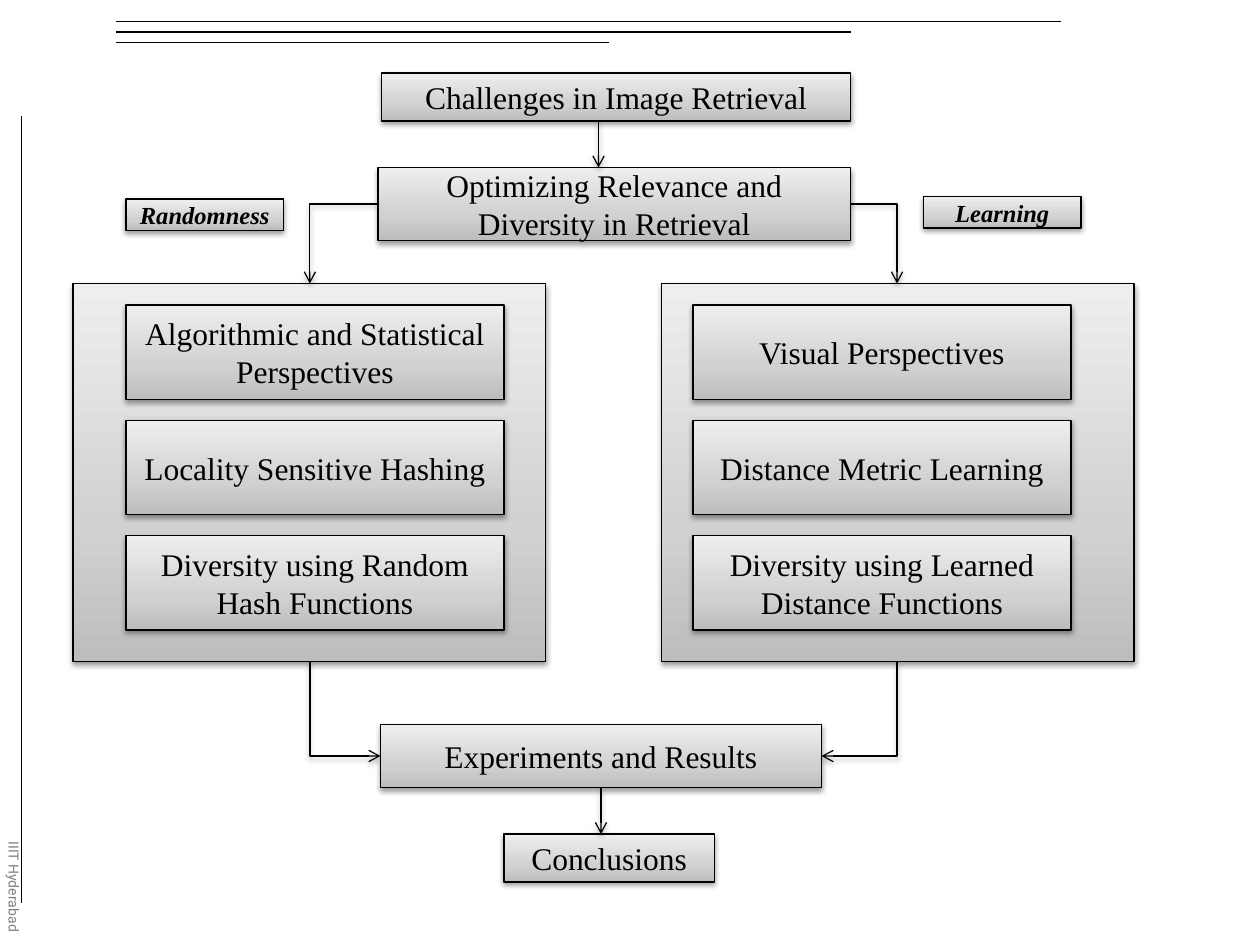
import copy

import lxml.etree
import pptx
import pptx.dml.color
import pptx.enum.shapes
import pptx.enum.text
import pptx.oxml
import pptx.oxml.ns
import pptx.util

Inches = pptx.util.Inches
Pt = pptx.util.Pt
qn = pptx.oxml.ns.qn
CONNECTOR = pptx.enum.shapes.MSO_CONNECTOR

COLORS = {"ink": "000000", "label": "808080", "dark": "BDBDBD", "middle": "D1D1D1", "light": "EEEEEE"}
GRADIENT = [(0, "dark"), (0.35, "middle"), (1, "light")]
SERIF = "Times New Roman"
BOTTOM = 2


def color(name):
    return pptx.dml.color.RGBColor.from_string(COLORS[name])


def add_shadow(effects):
    effects.append(pptx.oxml.parse_xml(
        '<a:outerShdw xmlns:a="http://schemas.openxmlformats.org/drawingml/2006/main" '
        'blurRad="40000" dist="20000" dir="5400000" rotWithShape="0">'
        f'<a:srgbClr val="{COLORS["ink"]}"><a:alpha val="38000"/></a:srgbClr></a:outerShdw>'))


def style_line(line):
    line.color.rgb = color("ink")
    line.width = Pt(0.75)


def fill_gradient(fill):
    fill.gradient()
    fill.gradient_angle = 90
    stop_list = fill._xPr.find(qn("a:gradFill")).find(qn("a:gsLst"))
    stop_list.append(copy.deepcopy(stop_list[-1]))
    for stop, (position, name) in zip(fill.gradient_stops, GRADIENT):
        stop.position = position
        stop.color.rgb = color(name)


def add_text(paragraph, text, size, font_name, color_name, emphasis=None):
    run = paragraph.add_run()
    run.text = text
    run.font.size = Pt(size)
    run.font.name = font_name
    run.font.color.rgb = color(color_name)
    run.font.bold = emphasis
    run.font.italic = emphasis


def add_box(slide, box, text="", size=18, emphasis=None):
    shape = slide.shapes.add_shape(
        pptx.enum.shapes.MSO_SHAPE.RECTANGLE, *[Inches(length) for length in box])
    fill_gradient(shape.fill)
    style_line(shape.line)
    shape.shadow.inherit = False
    add_shadow(shape.element.spPr.find(qn("a:effectLst")))
    if text:
        frame = shape.text_frame
        frame.word_wrap = True
        frame.vertical_anchor = pptx.enum.text.MSO_ANCHOR.MIDDLE
        paragraph = frame.paragraphs[0]
        paragraph.alignment = pptx.enum.text.PP_ALIGN.CENTER
        add_text(paragraph, text, size, SERIF, "ink", emphasis)
    return shape


def add_line(slide, start, end, kind=CONNECTOR.STRAIGHT, arrow=True):
    connector = slide.shapes.add_connector(kind, *[Inches(length) for length in (*start, *end)])
    style_line(connector.line)
    properties = connector.element.spPr
    effects = lxml.etree.SubElement(properties, qn("a:effectLst"))
    if arrow:
        add_shadow(effects)
        lxml.etree.SubElement(properties.find(qn("a:ln")), qn("a:tailEnd"), type="arrow")
    return connector


def add_elbow(slide, start, end, vertical_first=False):
    rotation = 0
    if vertical_first:
        center_x, center_y = (start[0] + end[0]) / 2, (start[1] + end[1]) / 2
        half_drop, half_run = (end[1] - start[1]) / 2, abs(end[0] - start[0]) / 2
        rotation, side = (270, 1) if end[0] > start[0] else (90, -1)
        start = (center_x + side * half_drop, center_y - half_run)
        end = (center_x - side * half_drop, center_y + half_run)
    connector = add_line(slide, start, end, CONNECTOR.ELBOW)
    properties = connector.element.spPr
    properties.find(qn("a:prstGeom")).set("prst", "bentConnector2")
    if rotation:
        properties.find(qn("a:xfrm")).set("rot", str(rotation * 60000))


def add_frame_lines(slide, box):
    left, top, width, height = box
    for index, right in enumerate((8.42, 6.75, 4.83)):
        y = 0.17 + index / 12
        add_line(slide, (left + 0.75, y), (right, y), arrow=False)
    add_line(slide, (left, top + 0.75), (left, top + height), arrow=False)


def add_side_label(slide, box):
    label = slide.shapes.add_textbox(*[Inches(length) for length in box])
    frame = label.text_frame
    frame.word_wrap = True
    label.element.txBody.find(qn("a:bodyPr")).set("vert", "eaVert")
    add_text(frame.paragraphs[0], "IIIT Hyderabad", 8, "Roboto", "label")


def add_panel(slide, box, card_inset, steps):
    left, top, width, height = box
    add_box(slide, box)
    for index, step in enumerate(steps):
        add_box(slide, (left + card_inset, top + 0.17 + index * 0.915, 3, 0.75), step)


def add_flow(slide):
    add_box(slide, (3.03, 0.58, 3.72, 0.38), "Challenges in Image Retrieval")
    add_box(slide, (3, 1.33, 3.75, 0.58), "Optimizing Relevance and Diversity in Retrieval")
    add_panel(slide, (0.58, 2.25, 3.75, 3), 0.42, [
        "Algorithmic and Statistical Perspectives",
        "Locality Sensitive Hashing",
        "Diversity using Random Hash Functions",
    ])
    add_panel(slide, (5.25, 2.25, 3.75, 3), 0.25, [
        "Visual Perspectives",
        "Distance Metric Learning",
        "Diversity using Learned Distance Functions",
    ])
    results = add_box(slide, (3.02, 5.75, 3.5, 0.5), "Experiments and Results")
    add_box(slide, (4, 6.62, 1.67, 0.38), "Conclusions")
    add_box(slide, (1, 1.58, 1.25, 0.25), "Randomness", 14, True)
    add_box(slide, (7.33, 1.56, 1.25, 0.25), "Learning", 14, True)

    add_line(slide, (4.75, 0.96), (4.75, 1.33))
    add_line(slide, (4.77, 6.25), (4.77, 6.62)).begin_connect(results, BOTTOM)
    for panel_x, source_x, target_x in ((2.46, 3, 3.02), (7.12, 6.75, 6.52)):
        add_elbow(slide, (source_x, 1.62), (panel_x, 2.25))
        add_elbow(slide, (panel_x, 5.25), (target_x, 6), vertical_first=True)


def main():
    presentation = pptx.Presentation()
    presentation.slide_width = Inches(10)
    presentation.slide_height = Inches(7.5)
    slide = presentation.slides.add_slide(presentation.slide_layouts[6])
    add_frame_lines(slide, (0.17, 0.17, 8.25, 7))
    add_side_label(slide, (-0.1, 6.58, 0.33, 0.92))
    add_flow(slide)
    presentation.save("out.pptx")


if __name__ == "__main__":
    main()
